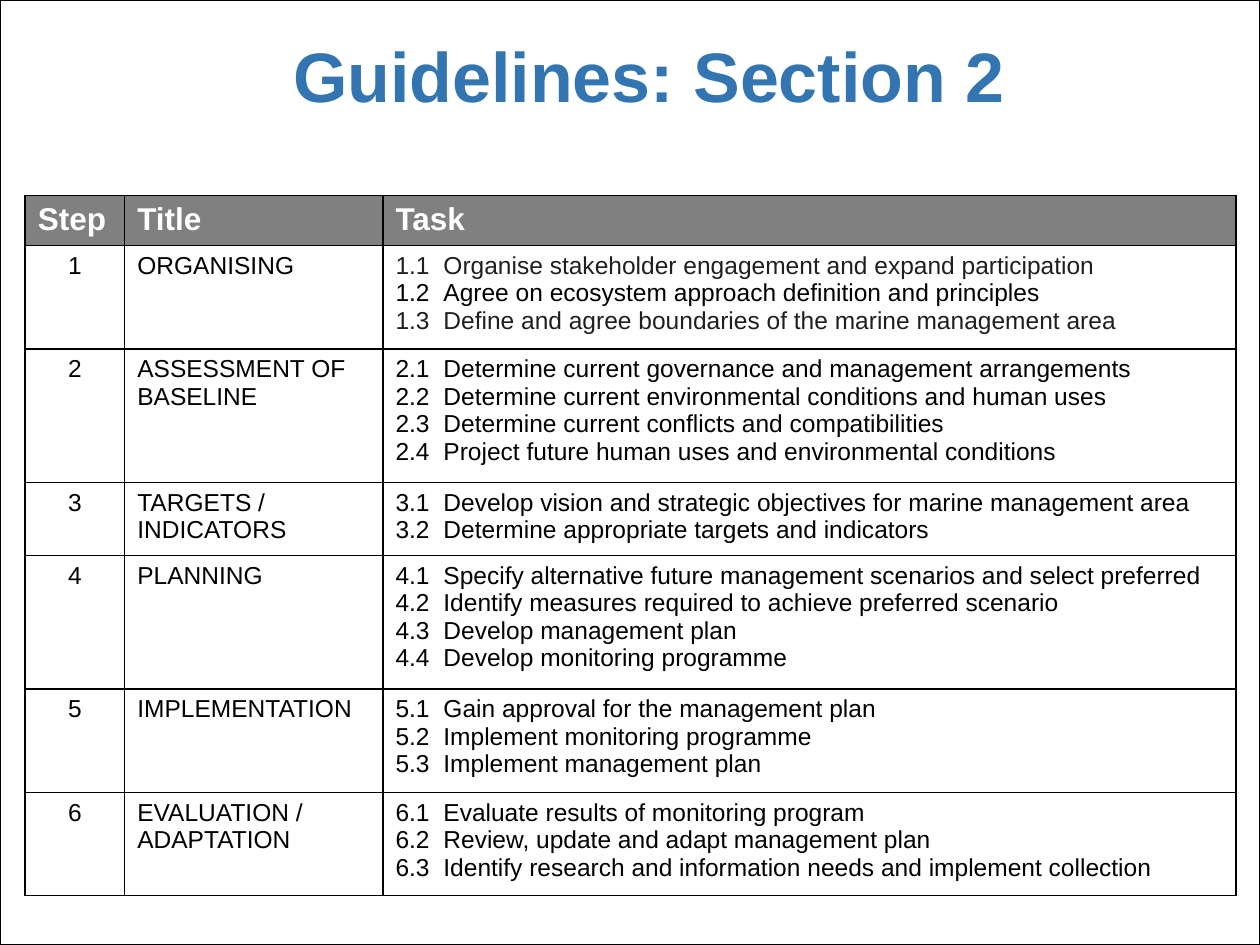
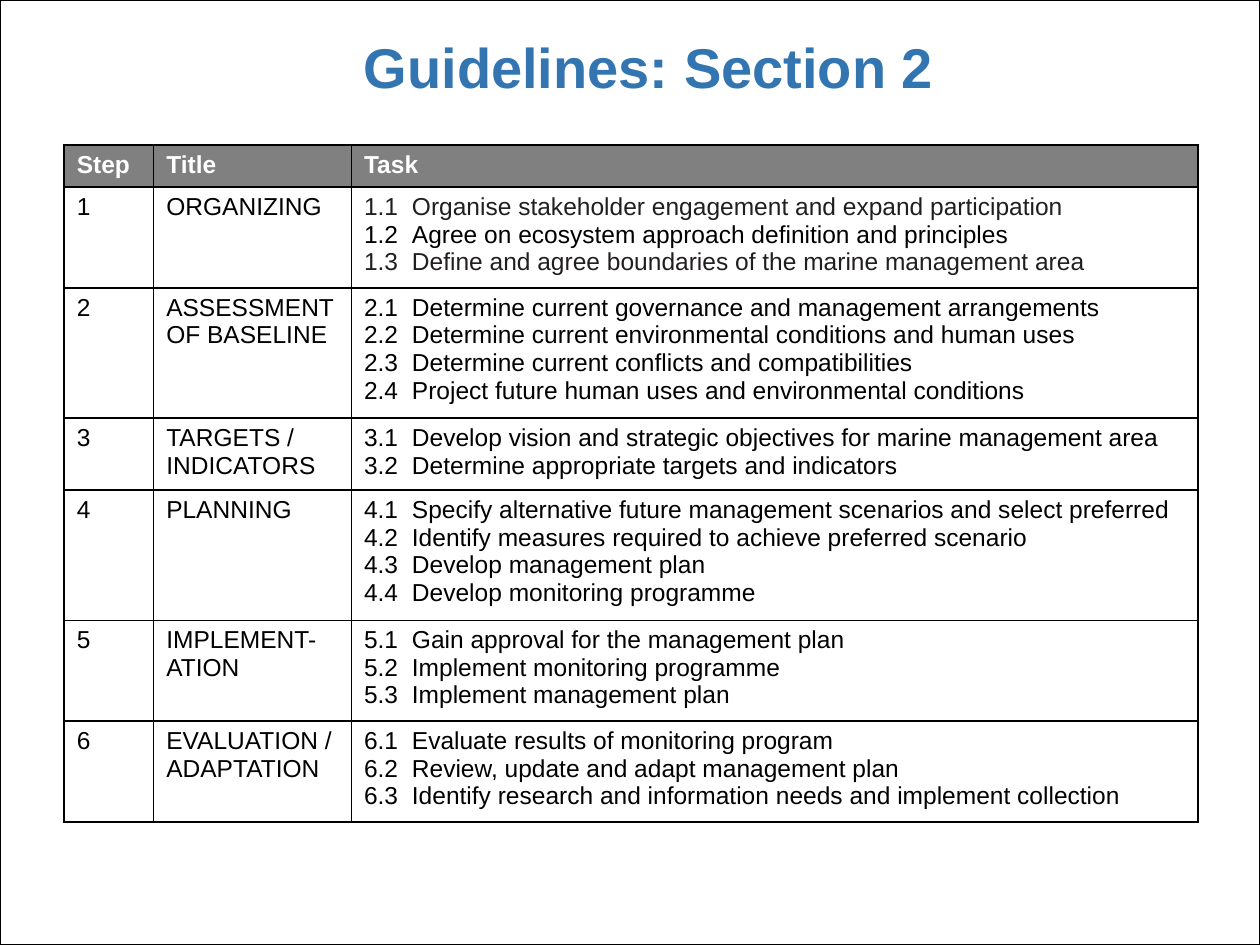
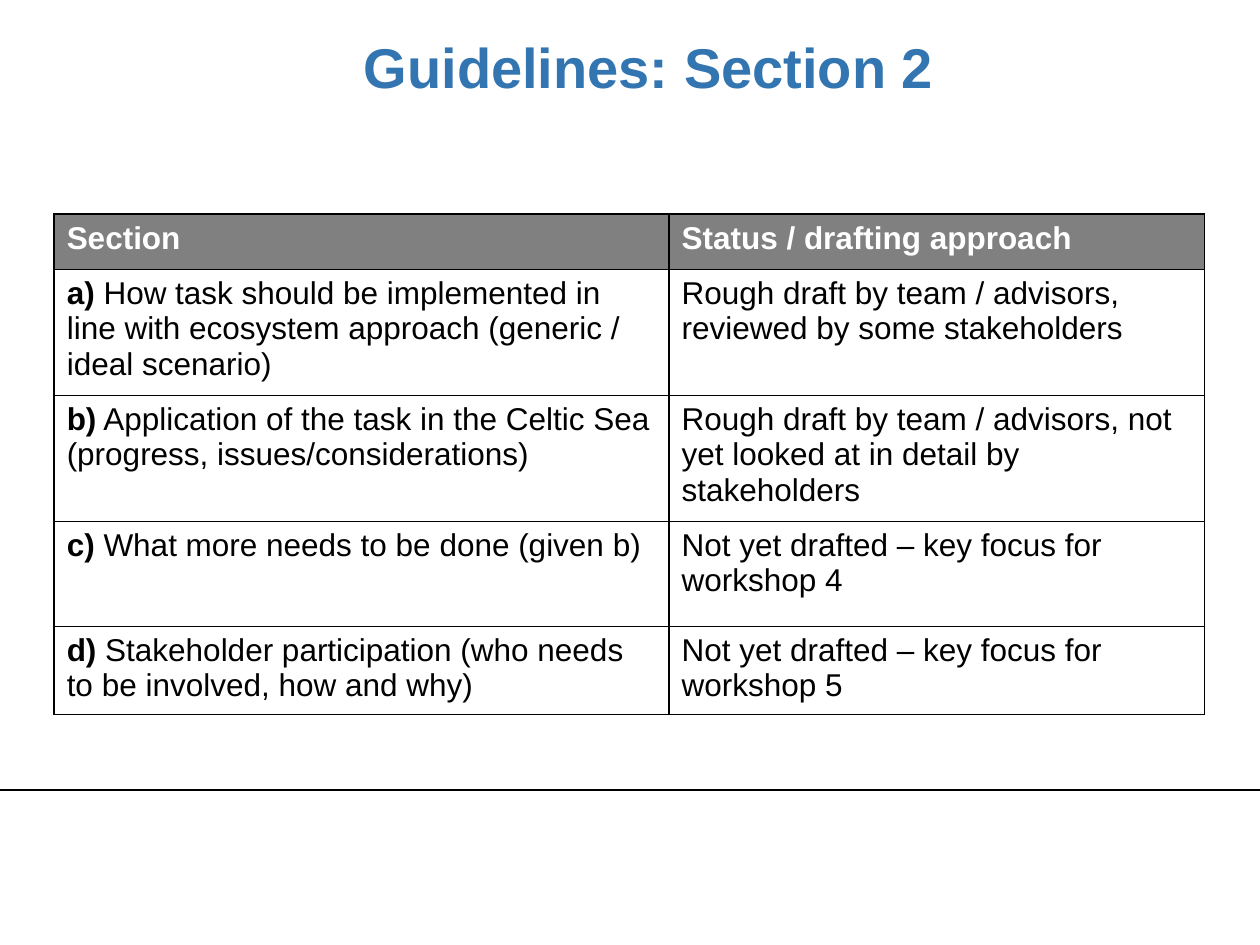
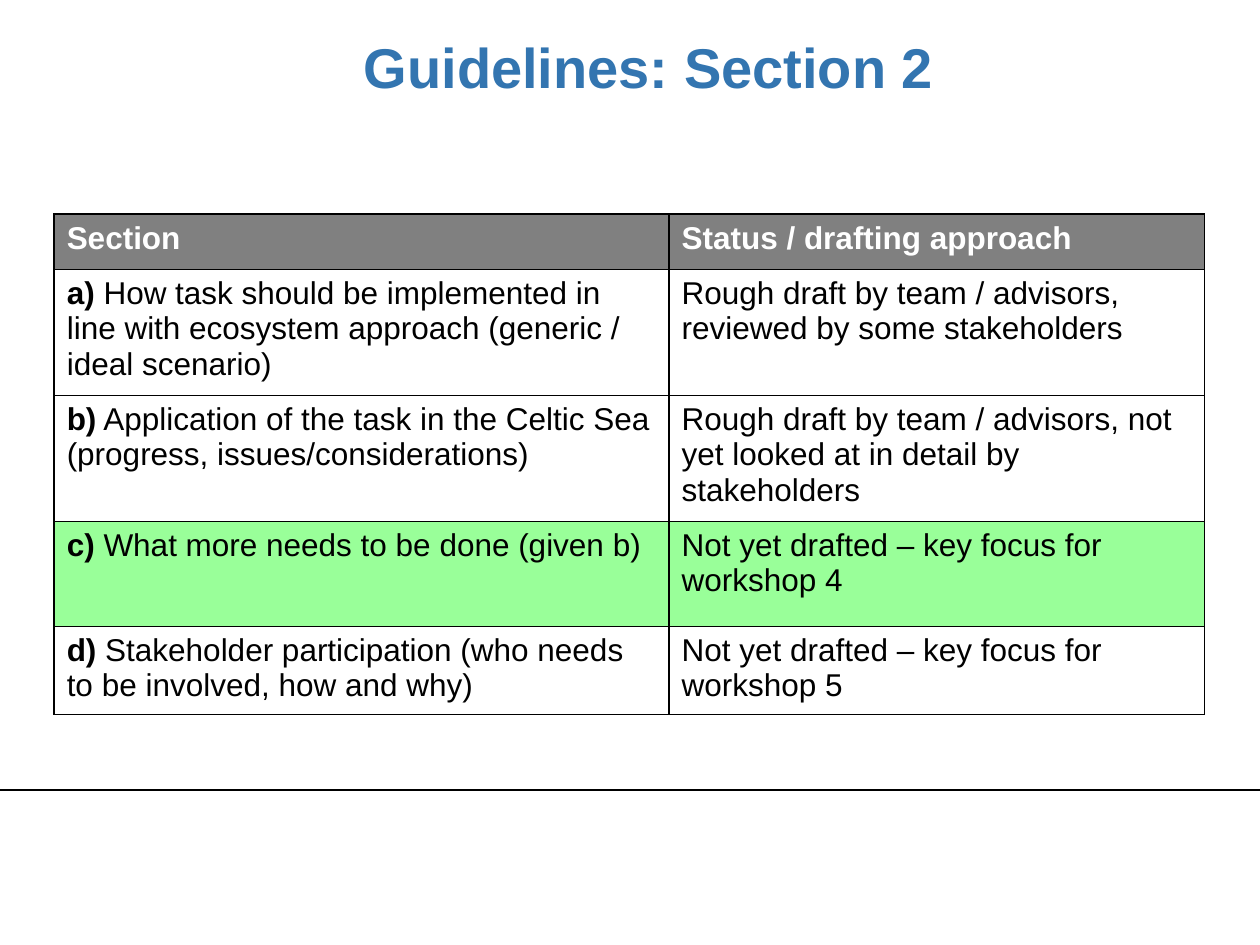
"""Build four slides of guideline tables, Section 2."""
from dataclasses import dataclass
from typing import NamedTuple

from lxml.etree import SubElement
from pptx import Presentation
from pptx.dml.color import RGBColor
from pptx.enum.shapes import MSO_CONNECTOR, MSO_SHAPE
from pptx.enum.text import PP_ALIGN
from pptx.oxml.ns import qn
from pptx.slide import Slide
from pptx.util import Inches, Pt

HUES = {
    "black": "000000",
    "white": "FFFFFF",
    "ink": "211E1E",
    "blue": "3375B0",
    "grey": "808080",
    "green": "99FF99",
}
FONT = "Arial"
TITLE = "Guidelines: Section 2"
TAB = Inches(0.38)


class Run(NamedTuple):
    text: str
    hue: str = "black"
    bold: bool = False


@dataclass
class Cell:
    lines: list[list[Run]]
    size: int
    fill: str | None = None
    align: PP_ALIGN = PP_ALIGN.LEFT
    tab: bool = False


@dataclass
class Grid:
    left: float
    top: float
    cols: list[float]
    rows: list[float]
    cells: list[list[Cell]]


class Step(NamedTuple):
    title: str
    tasks: list[str]


STEPS = [
    Step("ORGANISING", [
        "Organise stakeholder engagement and expand participation",
        "Agree on ecosystem approach definition and principles",
        "Define and agree boundaries of the marine management area",
    ]),
    Step("ASSESSMENT OF BASELINE", [
        "Determine current governance and management arrangements",
        "Determine current environmental conditions and human uses",
        "Determine current conflicts and compatibilities",
        "Project future human uses and environmental conditions",
    ]),
    Step("TARGETS / INDICATORS", [
        "Develop vision and strategic objectives for marine management area",
        "Determine appropriate targets and indicators",
    ]),
    Step("PLANNING", [
        "Specify alternative future management scenarios and select preferred",
        "Identify measures required to achieve preferred scenario",
        "Develop management plan",
        "Develop monitoring programme",
    ]),
    Step("IMPLEMENTATION", [
        "Gain approval for the management plan",
        "Implement monitoring programme",
        "Implement management plan",
    ]),
    Step("EVALUATION / ADAPTATION", [
        "Evaluate results of monitoring program",
        "Review, update and adapt management plan",
        "Identify research and information needs and implement collection",
    ]),
]
RENAMED = {"ORGANISING": "ORGANIZING", "IMPLEMENTATION": "IMPLEMENT-ATION"}
INKED = {"1.1", "1.3"}
PARTS = [
    ("a)", "How task should be implemented in line with ecosystem approach "
     "(generic / ideal scenario)",
     "Rough draft by team / advisors, reviewed by some stakeholders"),
    ("b)", "Application of the task in the Celtic Sea (progress, issues/considerations)",
     "Rough draft by team / advisors, not yet looked at in detail by stakeholders"),
    ("c)", "What more needs to be done (given b)",
     "Not yet drafted – key focus for workshop 4"),
    ("d)", "Stakeholder participation (who needs to be involved, how and why)",
     "Not yet drafted – key focus for workshop 5"),
]


def paint(name: str) -> RGBColor:
    return RGBColor.from_string(HUES[name])


def add_run(para, run: Run, size: int) -> None:
    font = para.add_run()
    font.text = run.text
    font = font.font
    for key, value in {"name": FONT, "size": Pt(size), "bold": run.bold}.items():
        setattr(font, key, value)
    font.color.rgb = paint(run.hue)


def add_title(slide: Slide, size: int) -> None:
    box = slide.shapes.add_textbox(Inches(2.16), Inches(0.21), Inches(5.98), Inches(0.71))
    box.text_frame.word_wrap = True
    para = box.text_frame.paragraphs[0]
    para.alignment = PP_ALIGN.CENTER
    add_run(para, Run(TITLE, "blue", True), size)


def add_frame(slide: Slide, deck) -> None:
    frame = slide.shapes.add_shape(
        MSO_SHAPE.RECTANGLE, 0, 0, deck.slide_width, deck.slide_height)
    frame.shadow.inherit = False
    frame.fill.solid()
    frame.fill.fore_color.rgb = paint("white")
    frame.line.color.rgb = paint("black")
    frame.line.width = Pt(0.75)


def add_rule(slide: Slide, deck) -> None:
    level = Inches(6.27)
    rule = slide.shapes.add_connector(
        MSO_CONNECTOR.STRAIGHT, 0, level, deck.slide_width, level)
    rule.line.color.rgb = paint("black")
    rule.line.width = Pt(0.75)
    SubElement(rule._element.spPr, qn("a:effectLst"))


def add_edges(spot) -> None:
    props = spot._tc.get_or_add_tcPr()
    for side in "LRTB":
        edge = SubElement(props, qn(f"a:ln{side}"), w=str(Pt(1)))
        fill = SubElement(edge, qn("a:solidFill"))
        SubElement(fill, qn("a:srgbClr"), val=HUES["black"])


def fill_cell(spot, cell: Cell) -> None:
    add_edges(spot)
    if cell.fill:
        spot.fill.solid()
        spot.fill.fore_color.rgb = paint(cell.fill)
    else:
        spot.fill.background()
    frame = spot.text_frame
    for count, line in enumerate(cell.lines):
        para = frame.add_paragraph() if count else frame.paragraphs[0]
        para.alignment = cell.align
        if cell.tab:
            tabs = SubElement(para._p.get_or_add_pPr(), qn("a:tabLst"))
            SubElement(tabs, qn("a:tab"), pos=str(TAB), algn="l")
        for run in line:
            add_run(para, run, cell.size)


def add_grid(slide: Slide, grid: Grid) -> None:
    table = slide.shapes.add_table(
        len(grid.rows), len(grid.cols), Inches(grid.left), Inches(grid.top),
        Inches(sum(grid.cols)), Inches(sum(grid.rows))).table
    table.horz_banding = False
    for col, width in zip(table.columns, grid.cols):
        col.width = Inches(width)
    for row, height, cells in zip(table.rows, grid.rows, grid.cells):
        row.height = Inches(height)
        for spot, cell in zip(row.cells, cells):
            fill_cell(spot, cell)


def head_row(names: list[str], size: int) -> list[Cell]:
    return [Cell([[Run(name, "white", True)]], size, "grey") for name in names]


def step_rows(size: int, align: PP_ALIGN, names: dict[str, str]) -> list[list[Cell]]:
    rows = [head_row(["Step", "Title", "Task"], size)]
    for step, (title, tasks) in enumerate(STEPS, 1):
        lines = []
        for count, task in enumerate(tasks, 1):
            mark = f"{step}.{count}"
            lines.append([Run(f"{mark}\t{task}", "ink" if mark in INKED else "black")])
        rows.append([
            Cell([[Run(str(step))]], 14, align=align),
            Cell([[Run(names.get(title, title))]], 14),
            Cell(lines, 14, tab=True),
        ])
    return rows


def step_heights(head: float, by_count: dict[int, float]) -> list[float]:
    return [head] + [by_count[len(step.tasks)] for step in STEPS]


def part_rows(marked: str | None) -> list[list[Cell]]:
    rows = [head_row(["Section", "Status / drafting approach"], 18)]
    for mark, text, status in PARTS:
        fill = "green" if mark == marked else None
        rows.append([
            Cell([[Run(mark, bold=True), Run(f" {text}")]], 18, fill),
            Cell([[Run(status)]], 18, fill),
        ])
    return rows


def main() -> None:
    deck = Presentation()
    deck.slide_width, deck.slide_height = Inches(10), Inches(7.5)
    blank = deck.slide_layouts[6]

    step_grids = [
        (40, Grid(0.2, 1.55, [0.79, 2.05, 6.77],
                  step_heights(0.4, {2: 0.58, 3: 0.82, 4: 1.06}),
                  step_rows(18, PP_ALIGN.CENTER, {}))),
        (32, Grid(0.51, 1.15, [0.71, 1.57, 6.72],
                  step_heights(0.33, {2: 0.57, 3: 0.8, 4: 1.03}),
                  step_rows(14, PP_ALIGN.LEFT, RENAMED))),
    ]
    for size, grid in step_grids:
        slide = deck.slides.add_slide(blank)
        add_frame(slide, deck)
        add_title(slide, size)
        add_grid(slide, grid)

    for marked in (None, "c)"):
        slide = deck.slides.add_slide(blank)
        add_rule(slide, deck)
        add_title(slide, 32)
        add_grid(slide, Grid(0.43, 1.7, [4.88, 4.25], [0.44, 1, 1, 0.83, 0.7],
                             part_rows(marked)))

    deck.save("out.pptx")


if __name__ == "__main__":
    main()
